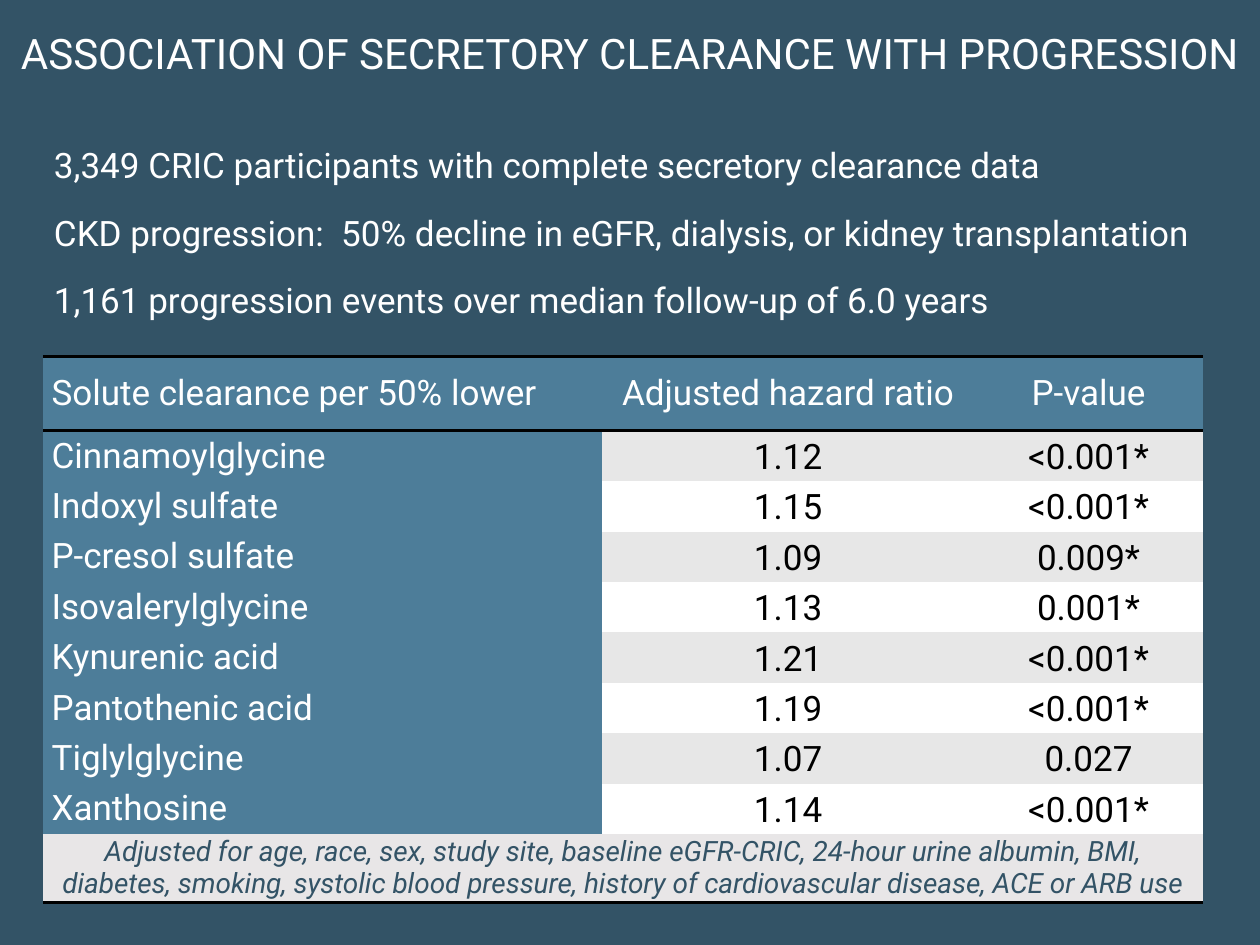
from dataclasses import dataclass

from lxml import etree
from pptx import Presentation
from pptx.dml.color import RGBColor
from pptx.enum.text import MSO_ANCHOR, MSO_AUTO_SIZE, PP_ALIGN
from pptx.oxml.ns import qn
from pptx.util import Inches, Pt

LEFT, CENTER = PP_ALIGN.LEFT, PP_ALIGN.CENTER
MIDDLE, BOTTOM = MSO_ANCHOR.MIDDLE, MSO_ANCHOR.BOTTOM
NO_FIT, GROW = MSO_AUTO_SIZE.NONE, MSO_AUTO_SIZE.SHAPE_TO_FIT_TEXT
TITLE_ONLY = 5
NO_STYLE_NO_GRID = "{2D5ABB26-0587-4C30-8999-92F81FD0307C}"


@dataclass(frozen=True)
class Theme:
    font: str = "Roboto"
    background: str = "335366"
    header: str = "4D7D99"
    light: str = "FFFFFF"
    dark: str = "000000"
    band: str = "E7E7E7"
    note_fill: str = "E8E6E7"
    title_size: int = 24
    body_size: int = 20
    note_size: int = 16
    rule_width: int = 2


THEME = Theme()

TITLE = "ASSOCIATION OF SECRETORY CLEARANCE WITH PROGRESSION"
STUDY_FACTS = [
    "3,349 CRIC participants with complete secretory clearance data",
    "CKD progression:  50% decline in eGFR, dialysis, or kidney transplantation",
    "1,161 progression events over median follow-up of 6.0 years",
]
HEADINGS = ["Solute clearance per 50% lower", "Adjusted hazard ratio", "P-value"]
SOLUTES = [
    ("Cinnamoylglycine", "1.12", "<0.001*"),
    ("Indoxyl sulfate", "1.15", "<0.001*"),
    ("P-cresol sulfate", "1.09", "0.009*"),
    ("Isovalerylglycine", "1.13", "0.001*"),
    ("Kynurenic acid", "1.21", "<0.001*"),
    ("Pantothenic acid", "1.19", "<0.001*"),
    ("Tiglylglycine", "1.07", "0.027"),
    ("Xanthosine", "1.14", "<0.001*"),
]
ADJUSTMENT_NOTE = (
    "Adjusted for age, race, sex, study site, baseline eGFR-CRIC, 24-hour urine albumin, "
    "BMI, diabetes, smoking, systolic blood pressure, history of cardiovascular disease, "
    "ACE or ARB use"
)
COLUMN_WIDTHS = [4.44, 2.95, 1.82]
ROW_HEIGHTS = [0.59] + [0.4] * len(SOLUTES) + [0.54]


def set_attributes(target, values):
    for name, value in values.items():
        setattr(target, name, value)


def write_paragraph(p, text, size=THEME.body_size, color=THEME.light, italic=False, **layout):
    set_attributes(p, layout)
    r = p.add_run()
    r.text = text
    set_attributes(r.font, {"name": THEME.font, "size": Pt(size), "italic": italic})
    r.font.color.rgb = RGBColor.from_string(color)


def add_title(slide, text):
    sp = slide.shapes.title
    box = {"left": 0, "top": Inches(0.17), "width": Inches(10), "height": Inches(0.5)}
    set_attributes(sp, box)
    tf = sp.text_frame
    set_attributes(tf, {"vertical_anchor": BOTTOM, "word_wrap": True, "auto_size": NO_FIT})
    write_paragraph(tf.paragraphs[0], text, THEME.title_size, alignment=CENTER)


def add_facts(slide, facts):
    sp = slide.shapes.add_textbox(Inches(0.33), Inches(1.06), Inches(9.25), Inches(1.52))
    tf = sp.text_frame
    set_attributes(tf, {"word_wrap": True, "auto_size": GROW})
    for i, fact in enumerate(facts):
        p = tf.add_paragraph() if i else tf.paragraphs[0]
        write_paragraph(p, fact, line_spacing=1.1, space_after=Pt(12))


def add_rule(cell, side):
    """Draw a cell border; side is "T" or "B". Call it before the cell is filled."""
    tc_pr = cell._tc.get_or_add_tcPr()
    ln = etree.SubElement(tc_pr, qn(f"a:ln{side}"), w=str(Pt(THEME.rule_width)))
    fill = etree.SubElement(ln, qn("a:solidFill"))
    etree.SubElement(fill, qn("a:srgbClr"), val=THEME.dark)


def fill_cell(cell, text, fill, rules="", **text_format):
    for side in rules:
        add_rule(cell, side)
    cell.fill.solid()
    cell.fill.fore_color.rgb = RGBColor.from_string(fill)
    margins = {"margin_left": Inches(0.07), "margin_right": Inches(0.07),
               "margin_top": 0, "margin_bottom": 0}
    set_attributes(cell, {"vertical_anchor": MIDDLE, **margins})
    if text:
        write_paragraph(cell.text_frame.paragraphs[0], text, **text_format)


def add_hazard_table(slide):
    frame = slide.shapes.add_table(
        len(ROW_HEIGHTS), len(COLUMN_WIDTHS), Inches(0.34), Inches(2.83),
        Inches(sum(COLUMN_WIDTHS)), Inches(sum(ROW_HEIGHTS)))
    table = frame.table
    set_attributes(table, {"first_row": False, "horz_banding": False})
    table._tbl.tblPr.find(qn("a:tableStyleId")).text = NO_STYLE_NO_GRID
    for column, width in zip(table.columns, COLUMN_WIDTHS):
        column.width = Inches(width)
    for row, height in zip(table.rows, ROW_HEIGHTS):
        row.height = Inches(height)

    for col, heading in enumerate(HEADINGS):
        fill_cell(table.cell(0, col), heading, THEME.header, "TB",
                  alignment=CENTER if col else LEFT)

    for row, (solute, *values) in enumerate(SOLUTES, start=1):
        fill_cell(table.cell(row, 0), solute, THEME.header, alignment=LEFT)
        band = THEME.band if row % 2 else THEME.light
        for col, value in enumerate(values, start=1):
            fill_cell(table.cell(row, col), value, band, color=THEME.dark,
                      alignment=CENTER, line_spacing=1.07)

    last = len(ROW_HEIGHTS) - 1
    table.cell(last, 0).merge(table.cell(last, len(COLUMN_WIDTHS) - 1))
    for col in range(len(COLUMN_WIDTHS)):
        fill_cell(table.cell(last, col), "" if col else ADJUSTMENT_NOTE, THEME.note_fill, "B",
                  size=THEME.note_size, color=THEME.background, italic=True, alignment=CENTER)


def main():
    prs = Presentation()
    set_attributes(prs, {"slide_width": Inches(10), "slide_height": Inches(7.5)})
    slide = prs.slides.add_slide(prs.slide_layouts[TITLE_ONLY])
    background = slide.background.fill
    background.solid()
    background.fore_color.rgb = RGBColor.from_string(THEME.background)
    add_title(slide, TITLE)
    add_hazard_table(slide)
    add_facts(slide, STUDY_FACTS)
    prs.save("out.pptx")


if __name__ == "__main__":
    main()
